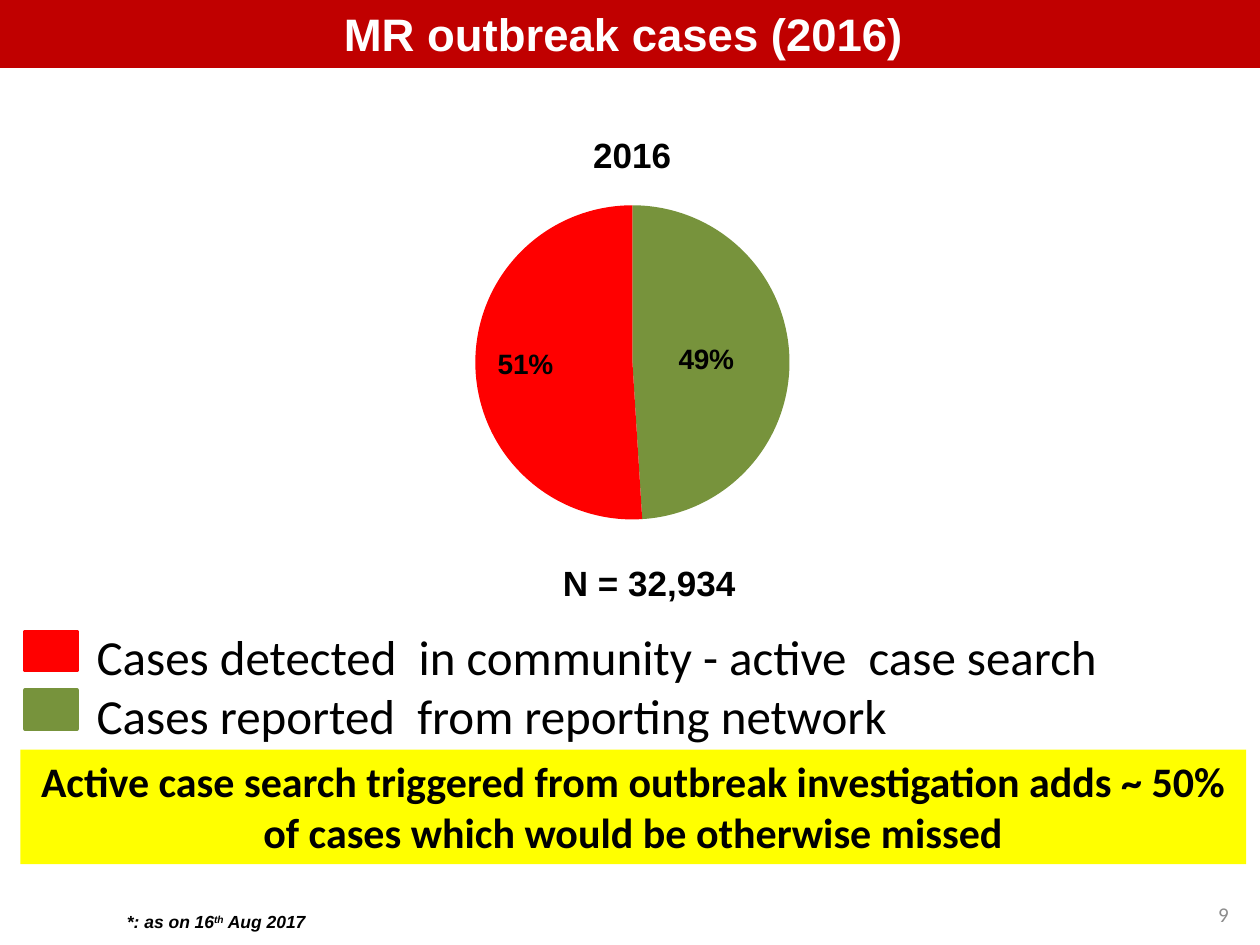
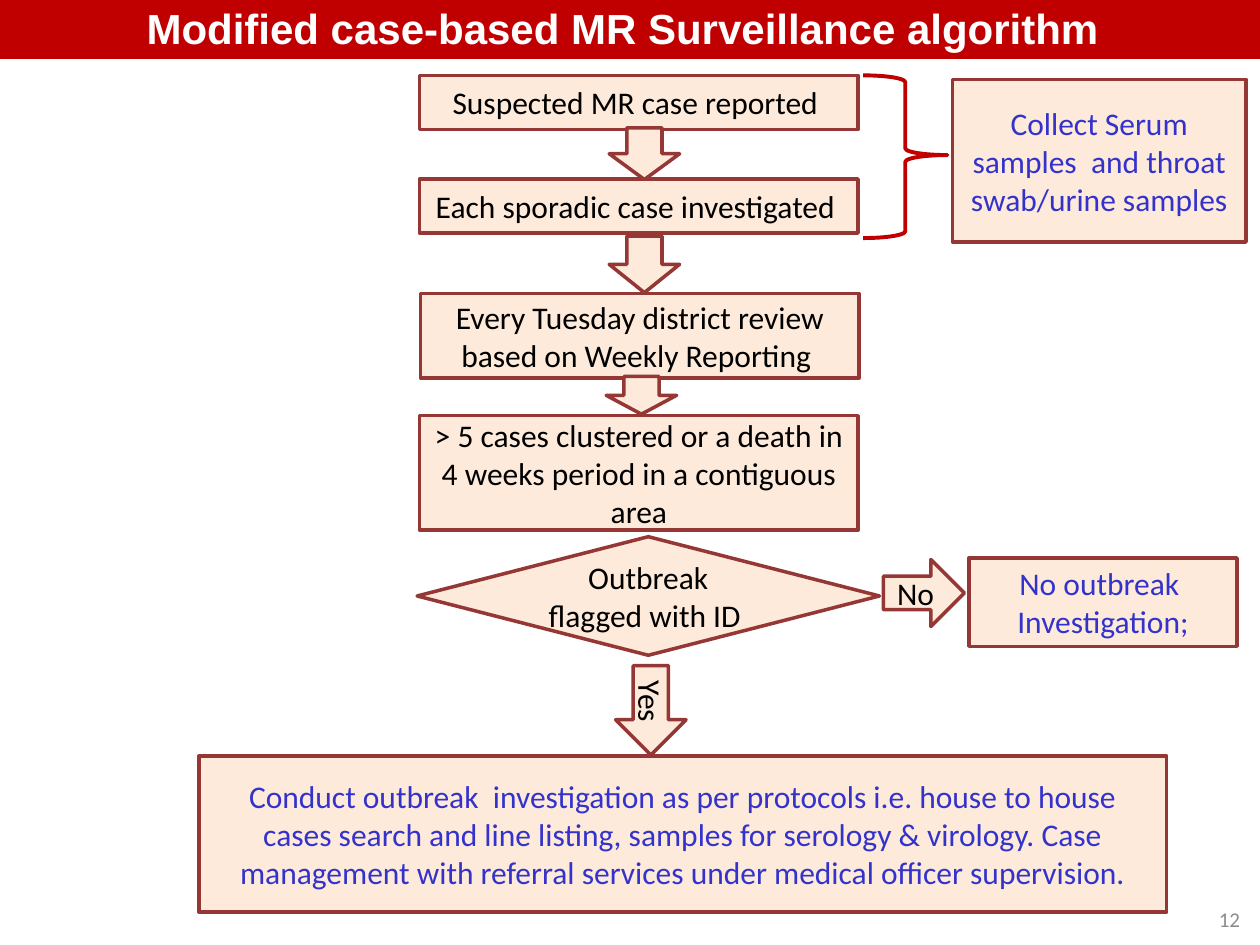
from dataclasses import dataclass

from lxml import etree
from pptx import Presentation
from pptx.chart.data import CategoryChartData
from pptx.dml.color import RGBColor
from pptx.enum.chart import XL_CHART_TYPE, XL_LABEL_POSITION
from pptx.enum.shapes import MSO_SHAPE
from pptx.enum.text import MSO_ANCHOR, PP_ALIGN
from pptx.util import Cm, Pt

RECTANGLE = MSO_SHAPE.RECTANGLE
DECISION = MSO_SHAPE.FLOWCHART_DECISION
ARROW = MSO_SHAPE.RIGHT_ARROW
BRACE = MSO_SHAPE.RIGHT_BRACE
PIE = XL_CHART_TYPE.PIE
LABEL_CENTER = XL_LABEL_POSITION.CENTER
TOP, MIDDLE = MSO_ANCHOR.TOP, MSO_ANCHOR.MIDDLE
LEFT, CENTER, RIGHT = PP_ALIGN.LEFT, PP_ALIGN.CENTER, PP_ALIGN.RIGHT

BAND_RED = "C00000"
RED = "FF0000"
GREEN = "77933C"
YELLOW = "FFFF00"
CREAM = "FDEADA"
MAROON = "953735"
BLUE = "3333CC"
BLACK = "000000"
WHITE = "FFFFFF"
GREY = "8C8C8C"

BAND_TEXT = {"name": "Arial", "bold": True}
CAPTION = {"name": "Arial", "size": Pt(20), "bold": True}
PERCENT = {"name": "Arial", "size": Pt(16), "bold": True}
LEGEND = {"name": "Calibri", "size": Pt(28)}
MESSAGE = {"name": "Calibri", "size": Pt(24), "bold": True}
FOOTNOTE = {"name": "Arial", "size": Pt(10), "bold": True, "italic": True}
STEP_TEXT = {"name": "Calibri", "size": Pt(18)}
PAGE_NUMBER = {"name": "Calibri", "size": Pt(12)}

CHART_NS = "http://schemas.openxmlformats.org/drawingml/2006/chart"


@dataclass(frozen=True)
class Area:
    left: float
    top: float
    width: float
    height: float

    def lengths(self) -> tuple:
        return Cm(self.left), Cm(self.top), Cm(self.width), Cm(self.height)


@dataclass(frozen=True)
class Step:
    area: Area
    text: str = ""
    color: str = BLACK
    kind: int = RECTANGLE
    rotation: int = 0


@dataclass(frozen=True)
class LegendEntry:
    text: str
    color: str


@dataclass(frozen=True)
class Slice:
    category: str
    value: int
    color: str
    label_shift: float


def rgb(color: str) -> RGBColor:
    return RGBColor.from_string(color)


def format_font(font, style: dict, color: str) -> None:
    for name, value in style.items():
        setattr(font, name, value)
    font.color.rgb = rgb(color)


def write(box, text: str, style: dict, color: str, align=LEFT, anchor=TOP, wrap=True):
    frame = box.text_frame
    frame.word_wrap = wrap
    frame.vertical_anchor = anchor
    para = frame.paragraphs[0]
    para.alignment = align
    return add_span(para, text, style, color)


def add_span(para, text: str, style: dict, color: str):
    span = para.add_run()
    span.text = text
    format_font(span.font, style, color)
    return span


def add_text(page, area: Area, text: str, style: dict, color=BLACK, **layout):
    box = page.shapes.add_textbox(*area.lengths())
    write(box, text, style, color, **layout)
    return box


def add_figure(page, kind, area: Area, fill="", line="", weight=2.0):
    figure = page.shapes.add_shape(kind, *area.lengths())
    figure.shadow.inherit = False
    if fill:
        figure.fill.solid()
        figure.fill.fore_color.rgb = rgb(fill)
    else:
        figure.fill.background()
    if line:
        figure.line.color.rgb = rgb(line)
        figure.line.width = Pt(weight)
    else:
        figure.line.fill.background()
    return figure


def add_band(page, area: Area, title: str, size: int) -> None:
    band = add_figure(page, RECTANGLE, area, BAND_RED)
    write(band, title, {**BAND_TEXT, "size": Pt(size)}, WHITE, align=CENTER)


def add_page_number(page, left: float, top: float, number: int) -> None:
    area = Area(left, top, 5.92, 1.02)
    add_text(page, area, str(number), PAGE_NUMBER, GREY, align=RIGHT, anchor=MIDDLE)


def manual_layout(**values):
    layout = etree.Element(f"{{{CHART_NS}}}layout")
    manual = etree.SubElement(layout, f"{{{CHART_NS}}}manualLayout")
    for name, value in values.items():
        etree.SubElement(manual, f"{{{CHART_NS}}}{name}").set("val", str(value))
    return layout


def add_pie(page, area: Area, slices: list) -> None:
    data = CategoryChartData()
    data.categories = [part.category for part in slices]
    data.add_series("Series 1", [part.value for part in slices])
    chart = page.shapes.add_chart(PIE, *area.lengths(), data).chart
    chart.has_title = False
    chart.has_legend = False
    format_font(chart.font, STEP_TEXT, BLACK)

    plot = chart.plots[0]
    plot.vary_by_categories = True
    series = plot.series[0]
    labels = series.data_labels
    labels.show_percentage = True
    labels.show_value = False
    format_font(labels.font, PERCENT, BLACK)
    for index, part in enumerate(slices):
        point = series.points[index]
        point.format.fill.solid()
        point.format.fill.fore_color.rgb = rgb(part.color)
        point.data_label.position = LABEL_CENTER
        format_font(point.data_label.font, PERCENT, BLACK)

    for label, part in zip(series._element.xpath("c:dLbls/c:dLbl"), slices):
        label.xpath("c:showVal")[0].set("val", "0")
        label.xpath("c:showPercent")[0].set("val", "1")
        label.xpath("c:idx")[0].addnext(manual_layout(x=part.label_shift, y=0))

    plot_area = plot._element.getparent()
    for layout in plot_area.xpath("c:layout"):
        plot_area.remove(layout)
    plot_area.insert(0, manual_layout(
        layoutTarget="inner", xMode="edge", yMode="edge", x=0.17, y=0.16, w=0.66, h=0.67))


def down_arrow(center: float, top: float, length: float, text: str = "") -> Step:
    breadth = 1.42
    area = Area(center - length / 2, top + (length - breadth) / 2, length, breadth)
    return Step(area, text, kind=ARROW, rotation=90)


def add_step(page, step: Step) -> None:
    figure = add_figure(page, step.kind, step.area, CREAM, MAROON)
    figure.rotation = step.rotation
    if step.text:
        write(figure, step.text, STEP_TEXT, step.color, align=CENTER, anchor=MIDDLE)


def build_outbreak_page(page) -> None:
    slices = [Slice("1", 49, GREEN, -0.01), Slice("2", 51, RED, -0.06)]
    add_pie(page, Area(7.95, 2.62, 9.6, 9.47), slices)
    add_text(page, Area(11.1, 11.2, 4.01, 1.12), "N = 32,934", CAPTION, wrap=False)
    add_text(page, Area(11.71, 2.57, 2.11, 1.12), "2016", CAPTION, wrap=False)
    add_band(page, Area(0, 0, 25.4, 1.37), "MR outbreak cases (2016) ", 26)
    add_page_number(page, 19.1, 17.91, 9)

    entries = [
        LegendEntry("Cases detected  in community - active  case search", RED),
        LegendEntry("Cases reported  from reporting network", GREEN),
    ]
    for row, entry in enumerate(entries):
        top = 12.73 + 1.18 * row
        add_figure(page, RECTANGLE, Area(0.51, top, 1.04, 0.79), entry.color, entry.color)
        add_text(page, Area(1.7, top - 0.22, 23, 1.45), entry.text, LEGEND)

    message = add_figure(page, RECTANGLE, Area(0.41, 15.11, 24.71, 2.31), YELLOW)
    write(message, "Active case search triggered from outbreak investigation adds ~ 50% "
          "of cases which would be otherwise missed", MESSAGE, BLACK, align=CENTER)

    note = add_text(page, Area(2.31, 18.24, 4.19, 0.69), "*: as on 16", FOOTNOTE, wrap=False)
    para = note.text_frame.paragraphs[0]
    ordinal = add_span(para, "th", FOOTNOTE, BLACK)
    ordinal.font._element.set("baseline", "30000")
    add_span(para, " Aug 2017", FOOTNOTE, BLACK)


def build_algorithm_page(page) -> None:
    add_band(page, Area(-0.08, -0.08, 25.5, 1.27),
             "Modified case-based MR Surveillance algorithm ", 24)
    left, width = 8.46, 8.84
    steps = [
        Step(Area(left, 1.52, width, 1.09), "Suspected MR case reported "),
        Step(Area(left, 3.61, width, 1.09), "Each sporadic case investigated "),
        Step(Area(left + 0.02, 5.92, width, 1.7),
             "Every Tuesday district review based on Weekly Reporting "),
        Step(Area(left, 8.38, width, 2.31),
             "> 5 cases clustered or a death in 4 weeks period in a contiguous area"),
        Step(Area(8.41, 10.82, 9.32, 2.39), "Outbreak flagged with ID ", kind=DECISION),
        Step(Area(19.53, 11.25, 5.41, 1.78), "No outbreak  Investigation;", BLUE),
        Step(Area(17.81, 11.28, 1.63, 1.35), "No", kind=ARROW),
        Step(Area(4.01, 15.24, 19.51, 3.15),
             "Conduct outbreak  investigation as per protocols i.e. house to house "
             "cases search and line listing, samples for serology & virology. Case "
             "management with referral services under medical officer supervision.", BLUE),
        Step(Area(19.2, 1.6, 5.92, 3.28),
             "Collect Serum samples  and throat swab/urine samples", BLUE),
        down_arrow(12.99, 2.58, 1.04),
        down_arrow(12.99, 4.76, 1.14),
        down_arrow(12.93, 7.59, 0.76),
        down_arrow(13.12, 13.42, 1.8, "Yes"),
    ]
    for step in steps:
        add_step(page, step)

    brace = add_figure(page, BRACE, Area(17.4, 1.52, 1.7, 3.28), line=BAND_RED, weight=2.25)
    brace.adjustments[0] = 0.08
    brace.adjustments[1] = 0.49
    add_page_number(page, 19.33, 18.01, 12)


def main() -> None:
    deck = Presentation()
    deck.slide_width = Cm(25.4)
    deck.slide_height = Cm(19.05)
    blank = deck.slide_layouts[6]
    for build in (build_outbreak_page, build_algorithm_page):
        build(deck.slides.add_slide(blank))
    deck.save("out.pptx")


if __name__ == "__main__":
    main()
